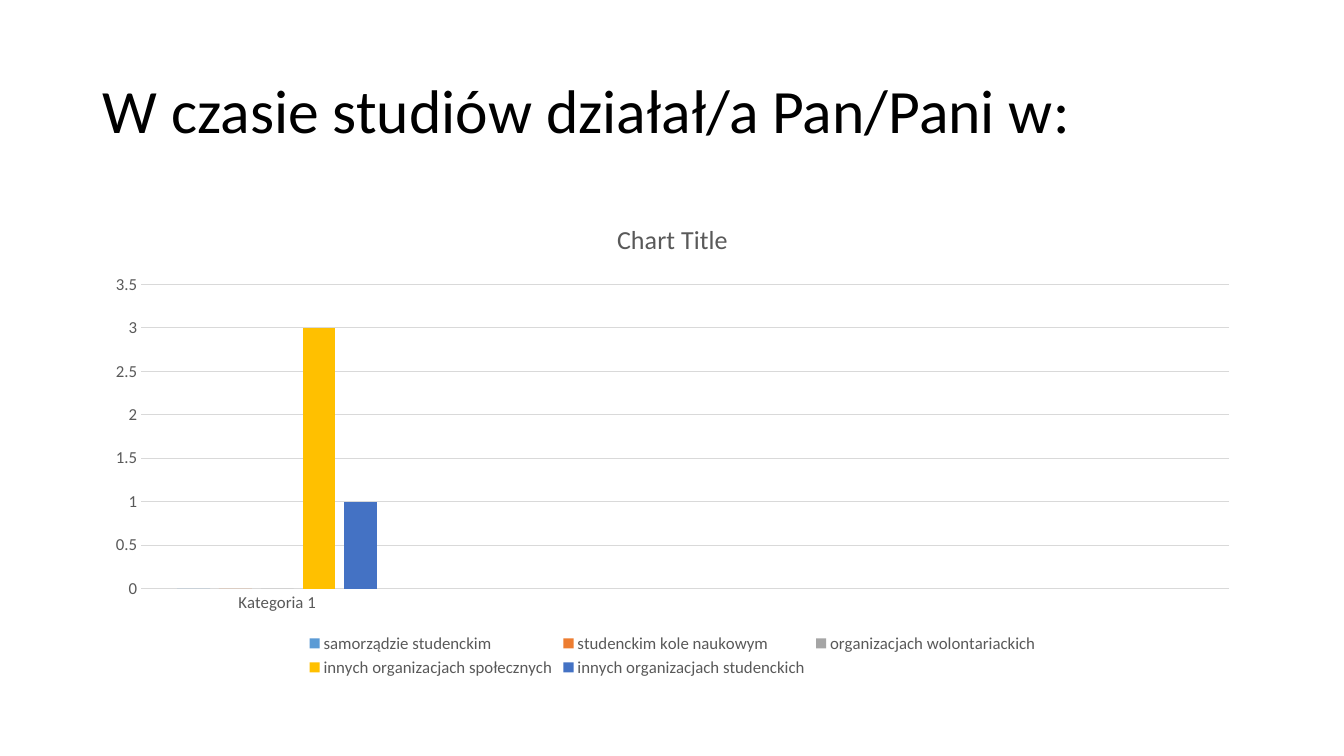
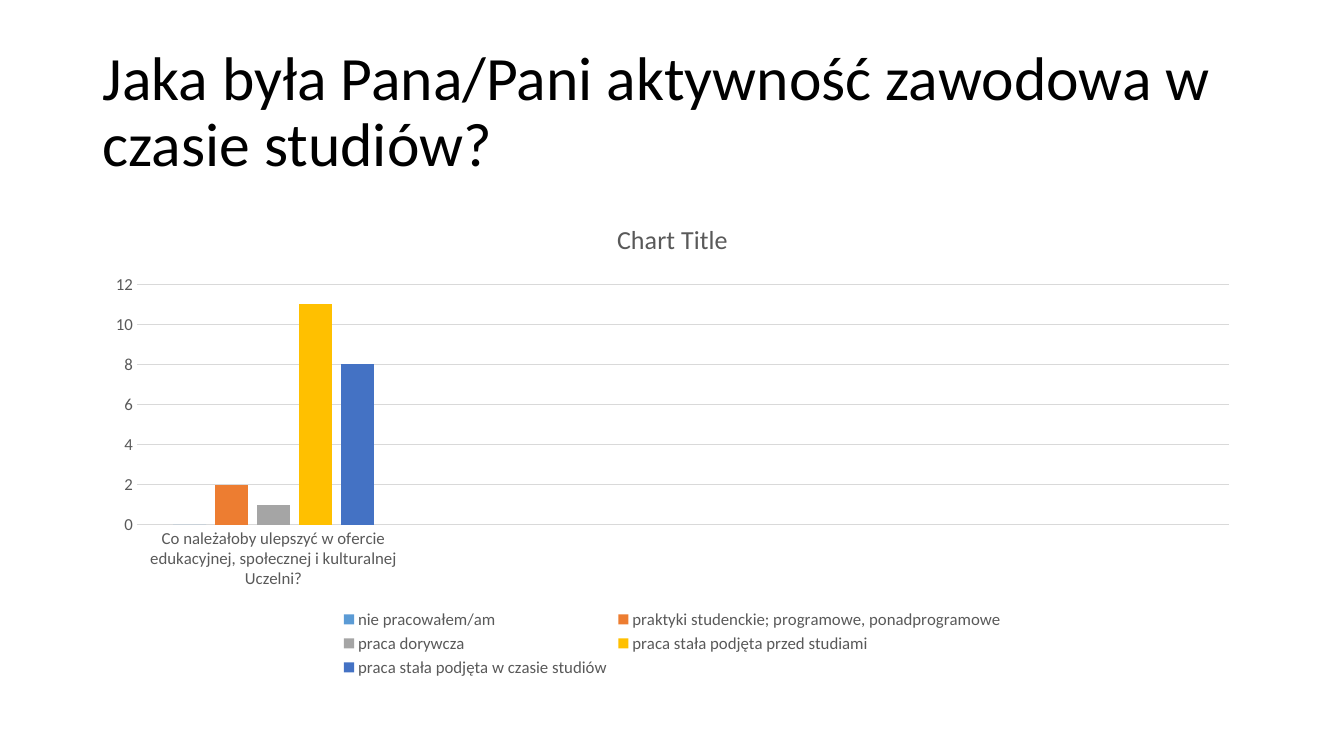
import pptx
import pptx.chart.data
import pptx.dml.color
import pptx.enum.chart
import pptx.enum.text
import pptx.util

Inches = pptx.util.Inches
Pt = pptx.util.Pt
RGBColor = pptx.dml.color.RGBColor

# Shared style
FONT = "Calibri"
BLACK = RGBColor(0x00, 0x00, 0x00)
GRAY = RGBColor(0x59, 0x59, 0x59)
RULE = RGBColor(0xD9, 0xD9, 0xD9)
BLUE = RGBColor(0x5B, 0x9B, 0xD5)
ORANGE = RGBColor(0xED, 0x7D, 0x31)
SILVER = RGBColor(0xA5, 0xA5, 0xA5)
GOLD = RGBColor(0xFF, 0xC0, 0x00)
NAVY = RGBColor(0x44, 0x72, 0xC4)
SERIES_COLORS = (BLUE, ORANGE, SILVER, GOLD, NAVY)

# Shared regions: left, top, width, height in inches
TITLE_BOX = (0.92, 0.4, 11.5, 1.45)
CHART_BOX = (0.92, 2, 11.5, 4.76)
CATEGORY_SLOTS = 4  # only the first slot is filled

SURVEY = [
    {
        "title": "W czasie studiów działał/a Pan/Pani w:",
        "category": "Kategoria 1",
        "answers": {
            "samorządzie studenckim": 0,
            "studenckim kole naukowym": 0,
            "organizacjach wolontariackich": 0,
            "innych organizacjach społecznych": 3,
            "innych organizacjach studenckich": 1,
        },
    },
    {
        "title": "Jaka była Pana/Pani aktywność zawodowa w czasie studiów?",
        "category": "Co należałoby ulepszyć w ofercie edukacyjnej, "
                    "społecznej i kulturalnej Uczelni?",
        "answers": {
            "nie pracowałem/am": 0,
            "praktyki studenckie; programowe, ponadprogramowe": 2,
            "praca dorywcza": 1,
            "praca stała podjęta przed studiami": 11,
            "praca stała podjęta w czasie studiów": 8,
        },
    },
]


def style_font(font, size, color):
    font.name = FONT
    font.size = Pt(size)
    font.bold = False
    font.color.rgb = color


def write_text(tf, text, size, color, spacing=None):
    p = tf.paragraphs[0]
    p.line_spacing = spacing
    r = p.add_run()
    r.text = text
    style_font(r.font, size, color)


def style_rule(line):
    line.color.rgb = RULE
    line.width = Pt(0.75)


def add_title(s, box, text):
    tf = s.shapes.add_textbox(*map(Inches, box)).text_frame
    tf.word_wrap = True
    tf.vertical_anchor = pptx.enum.text.MSO_ANCHOR.MIDDLE
    write_text(tf, text, size=44, color=BLACK, spacing=0.9)


def add_answer_chart(s, box, category, answers):
    data = pptx.chart.data.CategoryChartData()
    blanks = CATEGORY_SLOTS - 1
    data.categories = [category] + [""] * blanks
    for name, count in answers.items():
        data.add_series(name, [count] + [None] * blanks)
    kind = pptx.enum.chart.XL_CHART_TYPE.COLUMN_CLUSTERED
    chart = s.shapes.add_chart(kind, *map(Inches, box), data).chart
    style_font(chart.font, 10, BLACK)

    # Heading
    chart.has_title = True
    write_text(chart.chart_title.text_frame, "Chart Title", size=18.6, color=GRAY)
    chart.chart_title.include_in_layout = False

    # Columns
    plot = chart.plots[0]
    plot.vary_by_categories = False
    plot.gap_width = 219
    plot.overlap = -27
    for series, color in zip(plot.series, SERIES_COLORS):
        series.format.fill.solid()
        series.format.fill.fore_color.rgb = color

    # Axes
    for axis in (chart.category_axis, chart.value_axis):
        axis.major_tick_mark = pptx.enum.chart.XL_TICK_MARK.NONE
        axis.minor_tick_mark = pptx.enum.chart.XL_TICK_MARK.NONE
        style_font(axis.tick_labels.font, 12, GRAY)
    style_rule(chart.category_axis.format.line)
    chart.value_axis.format.line.fill.background()
    chart.value_axis.has_major_gridlines = True
    style_rule(chart.value_axis.major_gridlines.format.line)

    # Legend
    chart.has_legend = True
    chart.legend.position = pptx.enum.chart.XL_LEGEND_POSITION.BOTTOM
    chart.legend.include_in_layout = False
    style_font(chart.legend.font, 12, GRAY)


def add_question_slide(prs, title, category, answers):
    s = prs.slides.add_slide(prs.slide_layouts[6])
    add_title(s, TITLE_BOX, title)
    add_answer_chart(s, CHART_BOX, category, answers)


def main():
    prs = pptx.Presentation()
    prs.slide_width = Inches(13.33)
    prs.slide_height = Inches(7.5)
    for question in SURVEY:
        add_question_slide(prs, **question)
    prs.save("out.pptx")


if __name__ == "__main__":
    main()
